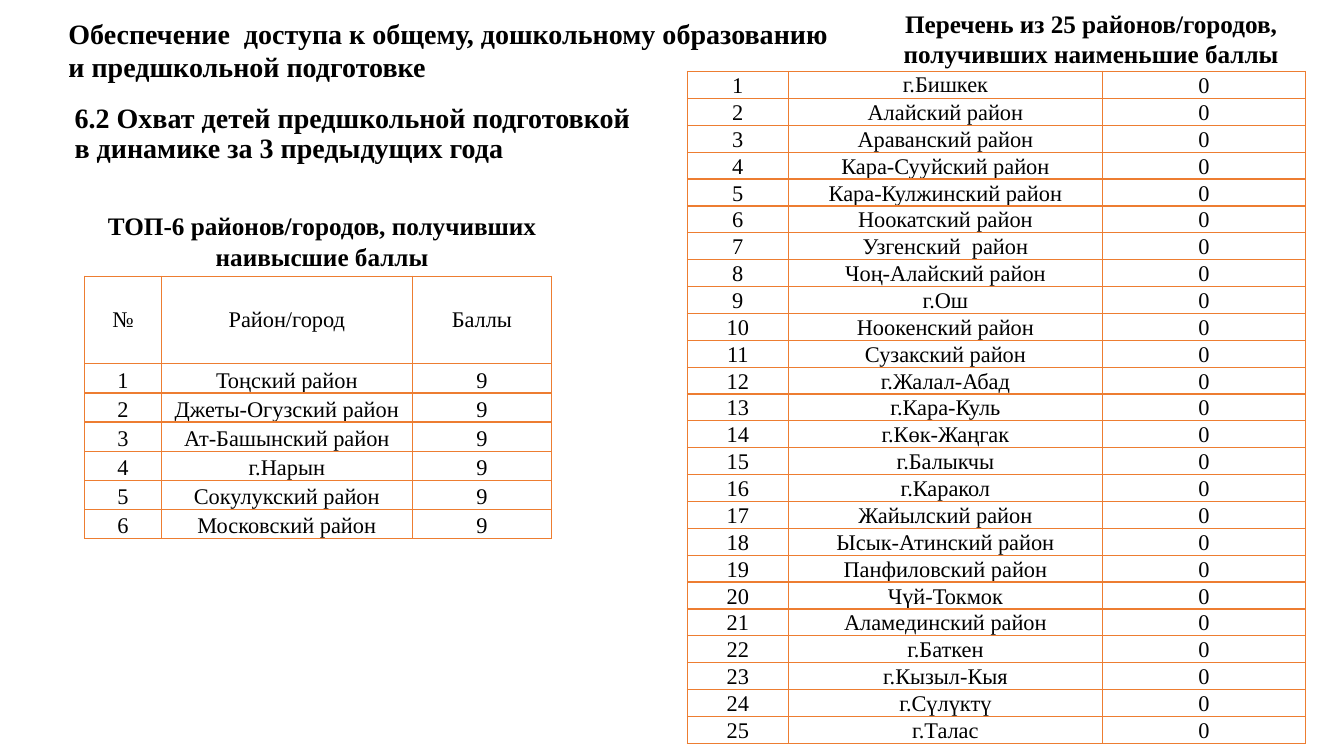
"""Slide on preschool preparation coverage: top and bottom districts by score."""
from dataclasses import dataclass

from lxml.etree import SubElement
from pptx import Presentation
from pptx.dml.color import RGBColor
from pptx.enum.text import MSO_ANCHOR as Anchor, MSO_AUTO_SIZE as AutoSize, PP_ALIGN as Align
from pptx.oxml import parse_xml
from pptx.oxml.ns import nsdecls, qn
from pptx.util import Emu, Inches, Pt

COLORS = {"text": "000000", "border": "ED7D31"}
FONT = "Times New Roman"
WIDTH, HEIGHT = Inches(13.333), Inches(7.5)
HEADER_INDENT = Inches(0.17)


@dataclass(frozen=True)
class Area:
    """Position and size as percentages of the slide."""
    left: float
    top: float
    width: float
    height: float

    def box(self) -> tuple[Emu, Emu, Emu, Emu]:
        return across(self.left), down(self.top), across(self.width), down(self.height)


@dataclass(frozen=True)
class Heading:
    lines: tuple[str, ...]
    area: Area
    size: int
    align: Align
    indent: int = 0


@dataclass(frozen=True)
class Ranking:
    left: float
    top: float
    columns: tuple[float, ...]
    heights: tuple[float, ...]
    rows: tuple[tuple[str, ...], ...]
    centred_cells: frozenset[tuple[int, int]]


def across(percent: float) -> Emu:
    return Emu(round(WIDTH * percent / 100))


def down(percent: float) -> Emu:
    return Emu(round(HEIGHT * percent / 100))


def scored(districts: tuple[str, ...], score: int) -> tuple[tuple[str, ...], ...]:
    return tuple((str(place), name, str(score)) for place, name in enumerate(districts, 1))


def style(paragraph, size: int, align: Align, bold: bool = False) -> None:
    paragraph.alignment = align
    paragraph.font.name = FONT
    paragraph.font.size = Pt(size)
    paragraph.font.bold = bold
    paragraph.font.color.rgb = RGBColor.from_string(COLORS["text"])


def fill_heading(shape, heading: Heading) -> None:
    shape.left, shape.top, shape.width, shape.height = heading.area.box()
    frame = shape.text_frame
    frame.word_wrap = True
    frame.text = "\n".join(heading.lines)
    for paragraph in frame.paragraphs:
        style(paragraph, heading.size, heading.align, bold=True)
        if heading.indent:
            paragraph._p.get_or_add_pPr().set("marL", str(heading.indent))


def add_heading(slide, heading: Heading) -> None:
    box = slide.shapes.add_textbox(*heading.area.box())
    fill_heading(box, heading)
    box.text_frame.auto_size = AutoSize.SHAPE_TO_FIT_TEXT


def outline(cell) -> None:
    properties = cell._tc.get_or_add_tcPr()
    for order, side in enumerate(("lnL", "lnR", "lnT", "lnB")):
        line = parse_xml(f'<a:{side} {nsdecls("a")} w="{Pt(1)}"/>')
        SubElement(SubElement(line, qn("a:solidFill")), qn("a:srgbClr"), val=COLORS["border"])
        properties.insert(order, line)


def add_ranking(slide, ranking: Ranking) -> None:
    area = Area(ranking.left, ranking.top, sum(ranking.columns), sum(ranking.heights))
    table = slide.shapes.add_table(len(ranking.rows), len(ranking.columns), *area.box()).table
    table.first_row = table.horz_banding = False
    for column, share in zip(table.columns, ranking.columns):
        column.width = across(share)
    for r, (row, share) in enumerate(zip(table.rows, ranking.heights)):
        row.height = down(share)
        for c, cell in enumerate(row.cells):
            cell.text = ranking.rows[r][c]
            cell.margin_left = cell.margin_right = cell.margin_top = cell.margin_bottom = 0
            cell.vertical_anchor = Anchor.MIDDLE if (r, c) in ranking.centred_cells else Anchor.BOTTOM
            cell.fill.background()
            outline(cell)
            style(cell.text_frame.paragraphs[0], 16, Align.CENTER)


INDICATOR = Heading(("6.2 Охват детей предшкольной подготовкой в динамике за 3 предыдущих года",),
                    Area(4.8, 13.07, 43.2, 9.33), 20, Align.LEFT)
HEADINGS = (
    Heading(("ТОП-6 районов/городов, получивших наивысшие баллы",),
            Area(6.9, 27.2, 34.13, 9.47), 18, Align.CENTER),
    Heading(("Перечень из 25 районов/городов, получивших наименьшие баллы",),
            Area(65.25, 0.4, 31.88, 9.47), 18, Align.CENTER),
    Heading(("Обеспечение  доступа к общему, дошкольному образованию", "и предшкольной подготовке"),
            Area(3.08, 1.47, 79.43, 10.27), 20, Align.LEFT, HEADER_INDENT),
)
BEST = ("Тоңский район", "Джеты-Огузский район", "Ат-Башынский район", "г.Нарын",
        "Сокулукский район", "Московский район")
LOWEST = ("г.Бишкек", "Алайский район", "Араванский район", "Кара-Сууйский район",
          "Кара-Кулжинский район", "Ноокатский район", "Узгенский  район", "Чоң-Алайский район",
          "г.Ош", "Ноокенский район", "Сузакский район", "г.Жалал-Абад", "г.Кара-Куль",
          "г.Көк-Жаңгак", "г.Балыкчы", "г.Каракол", "Жайылский район", "Ысык-Атинский район",
          "Панфиловский район", "Чүй-Токмок", "Аламединский район", "г.Баткен", "г.Кызыл-Кыя",
          "г.Сүлүктү", "г.Талас")
RANKINGS = (
    Ranking(6.3, 36.53, (5.7, 18.68, 10.35), (11.6,) + (3.85,) * len(BEST),
            (("№", "Район/город", "Баллы"),) + scored(BEST, 9),
            frozenset((0, column) for column in range(3))),
    Ranking(51.15, 9.47, (7.5, 23.4, 15.08), (88.93 / len(LOWEST),) * len(LOWEST),
            scored(LOWEST, 0), frozenset({(0, 1)})),
)


def main() -> None:
    deck = Presentation()
    deck.slide_width, deck.slide_height = WIDTH, HEIGHT
    slide = deck.slides.add_slide(deck.slide_layouts[5])
    title = slide.shapes.title
    fill_heading(title, INDICATOR)
    title.text_frame.auto_size = AutoSize.NONE
    title.text_frame.vertical_anchor = Anchor.MIDDLE
    title.text_frame.paragraphs[0].line_spacing = 0.9
    for ranking in RANKINGS:
        add_ranking(slide, ranking)
    for heading in HEADINGS:
        add_heading(slide, heading)
    deck.save("out.pptx")


if __name__ == "__main__":
    main()
